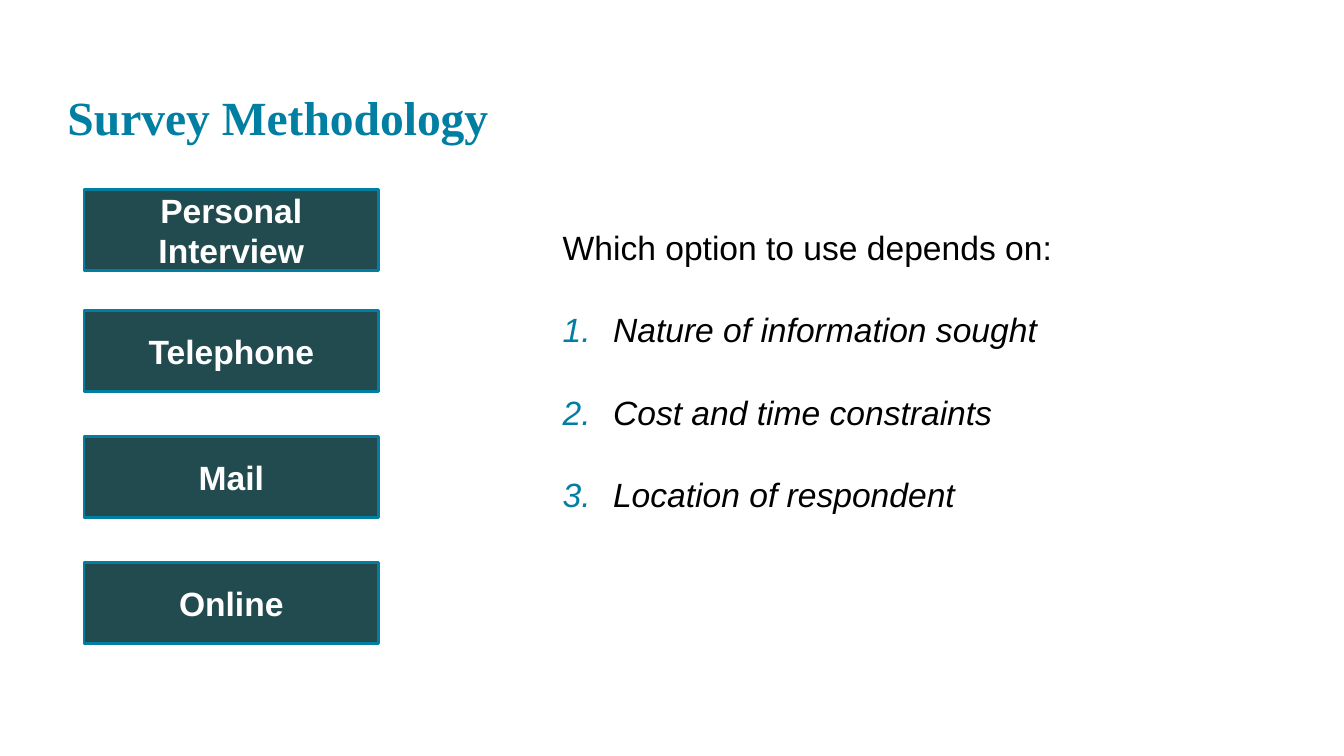
"""Build the Survey Methodology slide."""
from lxml.etree import SubElement
from pptx import Presentation
from pptx.dml.color import RGBColor
from pptx.enum.shapes import MSO_SHAPE
from pptx.enum.text import MSO_ANCHOR, MSO_AUTO_SIZE, PP_ALIGN
from pptx.oxml.ns import qn
from pptx.util import Cm, Pt

ACCENT = "007FA3"


def color(value):
    return RGBColor.from_string(value)


def prepare_frame(shape, anchor):
    frame = shape.text_frame
    frame.margin_left = frame.margin_right = 0
    frame.margin_top = frame.margin_bottom = 0
    frame.word_wrap = True
    frame.auto_size = MSO_AUTO_SIZE.NONE
    frame.vertical_anchor = anchor
    return frame


presentation = Presentation()
presentation.slide_width = Cm(33.87)
presentation.slide_height = Cm(19.05)
slide = presentation.slides.add_slide(presentation.slide_layouts[1])

title = slide.shapes.title
title.left, title.top, title.width, title.height = Cm(1.7), Cm(0.61), Cm(30.48), Cm(3.05)
frame = prepare_frame(title, MSO_ANCHOR.BOTTOM)
frame.text = "Survey Methodology"
paragraph = frame.paragraphs[0]
paragraph.alignment = PP_ALIGN.LEFT
font = paragraph.runs[0].font
font.name, font.size, font.bold = "Times New Roman", Pt(34), True
font.color.rgb = color(ACCENT)

methods = {"Personal Interview": 4.78, "Telephone": 7.82, "Mail": 11, "Online": 14.17}
for method, top in methods.items():
    box = slide.shapes.add_shape(MSO_SHAPE.RECTANGLE, Cm(2.12), Cm(top), Cm(7.42), Cm(2.04))
    box.shadow.inherit = False
    box.fill.solid()
    box.fill.fore_color.rgb = color("224B50")
    box.line.color.rgb = color(ACCENT)
    box.line.width = Pt(2)
    frame = prepare_frame(box, MSO_ANCHOR.MIDDLE)
    frame.text = method
    paragraph = frame.paragraphs[0]
    paragraph.alignment = PP_ALIGN.CENTER
    font = paragraph.runs[0].font
    font.name, font.size, font.bold = "Arial", Pt(24), True
    font.color.rgb = color("FFFFFF")

body = slide.placeholders[1]
body.left, body.top, body.width, body.height = Cm(14.18), Cm(5.72), Cm(13.55), Cm(9.02)
frame = prepare_frame(body, MSO_ANCHOR.TOP)
frame.text = "\n".join([
    "Which option to use depends on:",
    "Nature of information sought",
    "Cost and time constraints",
    "Location of respondent",
])
for index, paragraph in enumerate(frame.paragraphs):
    numbered = index > 0
    paragraph.space_before = Pt(30 if numbered else 0)
    properties = paragraph._p.get_or_add_pPr()
    indent = Cm(1.27) if numbered else 0
    properties.set("marL", str(indent))
    properties.set("indent", str(-indent))
    if numbered:
        bullet_color = SubElement(properties, qn("a:buClr"))
        SubElement(bullet_color, qn("a:srgbClr"), val=ACCENT)
        SubElement(properties, qn("a:buFont"), typeface="+mj-lt")
        SubElement(properties, qn("a:buAutoNum"), type="arabicPeriod")
    else:
        SubElement(properties, qn("a:buNone"))
    font = paragraph.runs[0].font
    font.name, font.size, font.italic = "Arial", Pt(24), numbered
    font.color.rgb = color("000000")

presentation.save("out.pptx")
